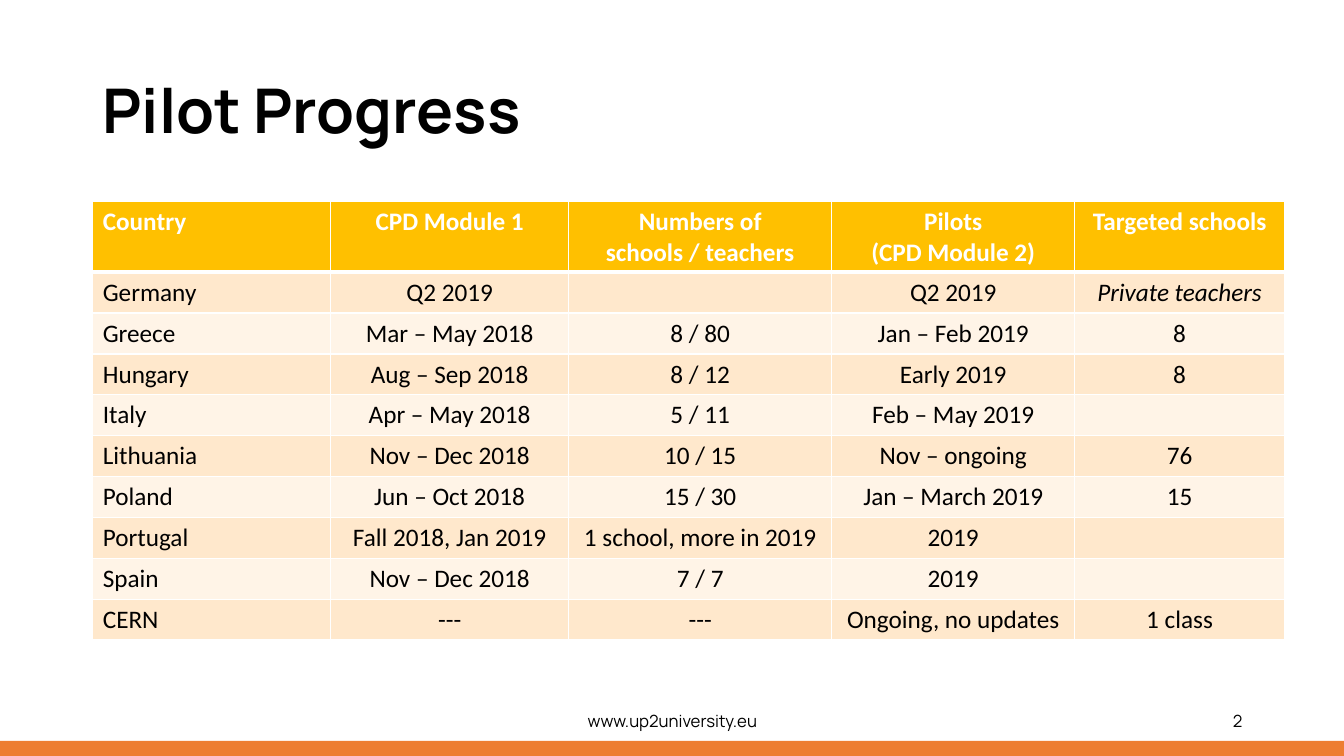
from dataclasses import dataclass

from lxml.etree import SubElement
from pptx import Presentation
from pptx.dml.color import RGBColor
from pptx.enum.shapes import MSO_SHAPE as SHAPE
from pptx.enum.text import MSO_ANCHOR as ANCHOR, PP_ALIGN as ALIGN
from pptx.oxml.ns import qn
from pptx.util import Inches, Pt


@dataclass(frozen=True)
class Theme:
    accent: str = "ED7D31"
    header: str = "FFC000"
    bands: tuple = ("FFE8CC", "FFF4E7")
    dark: str = "000000"
    light: str = "FFFFFF"
    heading_font: str = "Manrope"
    table_font: str = "Calibri"
    title_size: int = 44
    table_size: int = 18
    footer_size: int = 12


THEME = Theme()
COLUMN_WIDTHS = (2.36, 2.36, 2.61, 2.41, 2.08)
HEADER_HEIGHT = 0.7
TABLE_HEIGHT = 4.35
PILOTS = (
    ("Country", "CPD Module 1", "Numbers of\nschools / teachers",
     "Pilots\n(CPD Module 2)", "Targeted schools"),
    ("Germany", "Q2 2019", "", "Q2 2019", "Private teachers"),
    ("Greece", "Mar – May 2018", "8 / 80", "Jan – Feb 2019", "8"),
    ("Hungary", "Aug – Sep 2018", "8 / 12", "Early 2019", "8"),
    ("Italy", "Apr – May 2018", "5 / 11", "Feb – May 2019", ""),
    ("Lithuania", "Nov – Dec 2018", "10 / 15", "Nov – ongoing", "76"),
    ("Poland", "Jun – Oct 2018", "15 / 30", "Jan – March 2019", "15"),
    ("Portugal", "Fall 2018, Jan 2019", "1 school, more in 2019", "2019", ""),
    ("Spain", "Nov – Dec 2018", "7 / 7", "2019", ""),
    ("CERN", "---", "---", "Ongoing, no updates", "1 class"),
)


def rgb(color):
    return RGBColor.from_string(color)


def write(p, text, font, size, color, bold=False, italic=False):
    for i, line in enumerate(text.split("\n")):
        if i:
            p.add_line_break()
        r = p.add_run()
        r.text = line
        r.font.name = font
        r.font.size = Pt(size)
        r.font.color.rgb = rgb(color)
        r.font.bold = bold
        r.font.italic = italic


def add_label(s, box, text, size, align=ALIGN.LEFT, bold=False, spacing=1.0):
    tf = s.shapes.add_textbox(*map(Inches, box)).text_frame
    tf.word_wrap = True
    tf.vertical_anchor = ANCHOR.MIDDLE
    p = tf.paragraphs[0]
    p.alignment = align
    p.line_spacing = spacing
    write(p, text, THEME.heading_font, size, THEME.dark, bold)


def add_bar(s, box, color):
    sp = s.shapes.add_shape(SHAPE.RECTANGLE, *map(Inches, box))
    sp.shadow.inherit = False
    sp.fill.solid()
    sp.fill.fore_color.rgb = rgb(color)
    sp.line.fill.background()


def set_borders(cell, top, bottom):
    tcPr = cell._tc.get_or_add_tcPr()
    for side, width in (("L", 1), ("R", 1), ("T", top), ("B", bottom)):
        ln = SubElement(tcPr, qn(f"a:ln{side}"), w=str(Pt(width)))
        fill = SubElement(ln, qn("a:solidFill"))
        SubElement(fill, qn("a:srgbClr"), val=THEME.light)


def fill_cell(cell, text, row, col):
    is_header = row == 0
    set_borders(cell, top=3 if row == 1 else 1, bottom=3 if is_header else 1)
    cell.fill.solid()
    cell.fill.fore_color.rgb = rgb(
        THEME.header if is_header else THEME.bands[(row - 1) % 2])
    if text:
        p = cell.text_frame.paragraphs[0]
        p.alignment = ALIGN.CENTER if col else ALIGN.LEFT
        write(p, text, THEME.table_font, THEME.table_size,
              THEME.light if is_header else THEME.dark,
              bold=is_header, italic=text == "Private teachers")


def add_pilot_table(s, left, top):
    table = s.shapes.add_table(
        len(PILOTS), len(COLUMN_WIDTHS), Inches(left), Inches(top),
        Inches(sum(COLUMN_WIDTHS)), Inches(TABLE_HEIGHT)).table
    for column, width in zip(table.columns, COLUMN_WIDTHS):
        column.width = Inches(width)
    body_height = (TABLE_HEIGHT - HEADER_HEIGHT) / (len(PILOTS) - 1)
    for row, values in enumerate(PILOTS):
        table.rows[row].height = Inches(body_height if row else HEADER_HEIGHT)
        for col, text in enumerate(values):
            fill_cell(table.cell(row, col), text, row, col)


def main():
    prs = Presentation()
    prs.slide_width, prs.slide_height = Inches(13.33), Inches(7.5)
    s = prs.slides.add_slide(prs.slide_layouts[6])
    add_bar(s, (0, 7.35, 13.33, 0.15), THEME.accent)
    add_label(s, (0.92, 0.4, 10.08, 1.45), "Pilot Progress",
              THEME.title_size, bold=True, spacing=0.9)
    add_pilot_table(s, 0.92, 2)
    add_label(s, (4.42, 6.95, 4.5, 0.4), "www.up2university.eu",
              THEME.footer_size, ALIGN.CENTER)
    add_label(s, (9.42, 6.95, 3, 0.4), "2", THEME.footer_size, ALIGN.RIGHT)
    prs.save("out.pptx")


if __name__ == "__main__":
    main()
